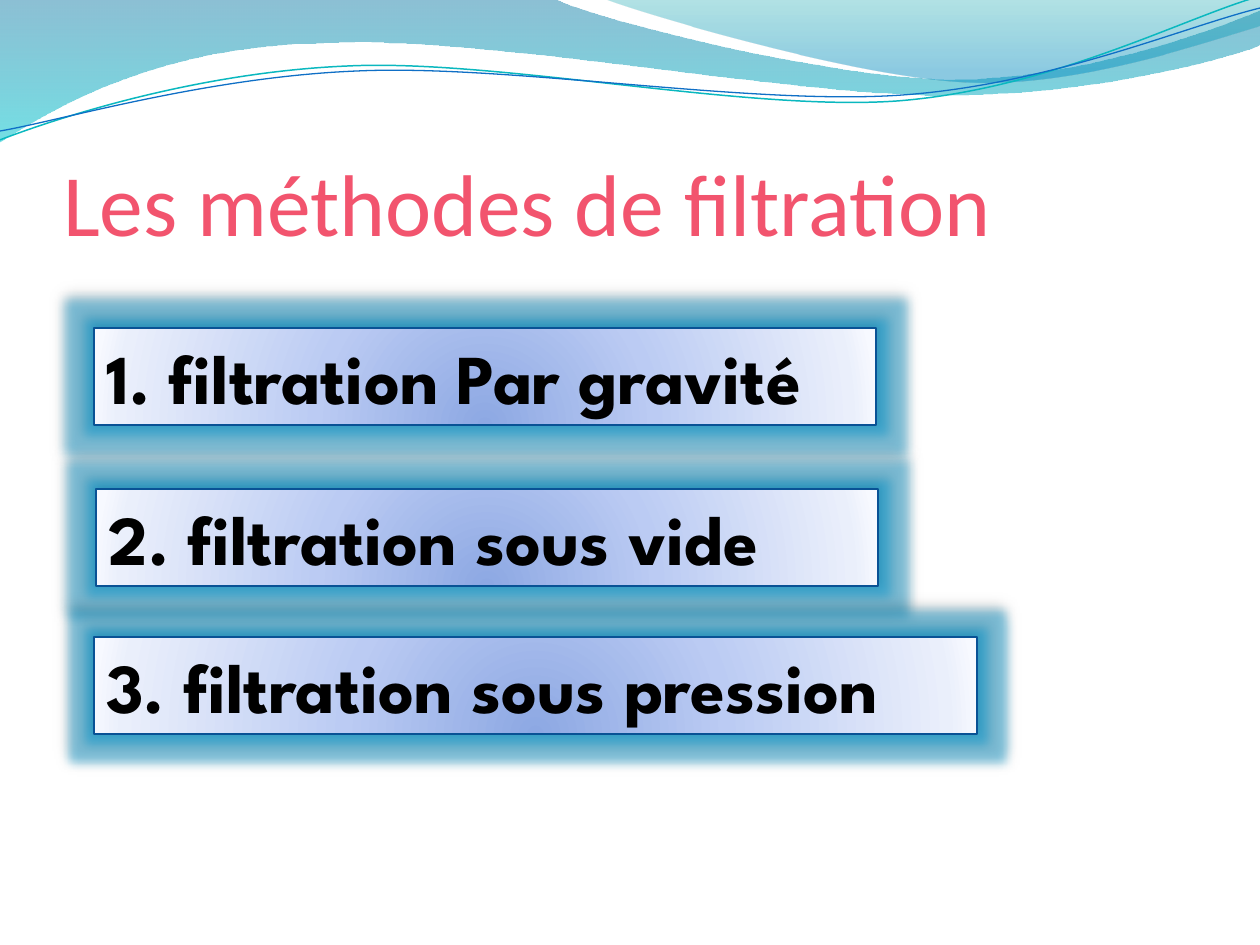
from math import cos, radians, sin

from lxml import etree
from pptx import Presentation
from pptx.dml.color import RGBColor
from pptx.enum.shapes import MSO_SHAPE
from pptx.enum.text import MSO_ANCHOR, PP_ALIGN
from pptx.oxml.ns import qn
from pptx.util import Pt

PX = 914400 / 126  # EMU in one px
LEFT, TOP, BOTTOM = PP_ALIGN.LEFT, MSO_ANCHOR.TOP, MSO_ANCHOR.BOTTOM
RECTANGLE = MSO_SHAPE.RECTANGLE
TITLE_ONLY = 5
LINE_TILT = -2.7  # degrees

# Waves: a start point, then line ends (2 numbers) or Bezier curves (6 numbers)
BACK_WAVE = [(0, 0), (554, -1), (600, 21, 837, 79, 955, 79),
             (1075, 79, 1207, 33, 1260, 11), (1261, 45),
             (1239, 55, 1096, 96, 940, 95), (784, 95, 481, 35, 324, 43),
             (163, 45, 58, 105, -1, 142), (0, 0)]
FRONT_WAVE = [(604, -1), (641, 14, 859, 78, 969, 82),
              (1079, 87, 1211, 40, 1260, 26), (1260, 0), (604, -1)]
TEAL_LINE = [(0, 140), (60, 117, 199, 72, 349, 66),
             (498, 59, 747, 112, 898, 101), (1050, 89, 1182, 19, 1257, -3)]
BLUE_LINE = [(0, 131), (59, 121, 207, 77, 357, 71),
             (508, 64, 752, 106, 903, 95), (1053, 84, 1186, 26, 1260, 8)]

# Gradient stops: position, colour, opacity (all in percent)
BACK_STOPS = [(0, "0074A1", 45), (100, "00C6CF", 55)]
FRONT_STOPS = [(0, "00A1A9", 30), (80, "008BBF", 45)]
BOX_STOPS = [(0, "8DA8E3", 100), (43, "BBCBF3", 100),
             (93, "EAEFFB", 100), (100, "F7F9FF", 100)]

METHODS = [("1. filtration Par gravité", 94, 328, 782),
           ("2. filtration sous vide", 96, 489, 782),
           ("3. filtration sous pression", 94, 637, 883)]
BOX_HEIGHT = 97


def px(value):
    return round(value * PX)


def rgb(hex_color):
    return RGBColor.from_string(hex_color)


def add_xml(parent, tag, **attributes):
    return etree.SubElement(parent, qn(tag), {k: str(v) for k, v in attributes.items()})


def add_color(parent, hex_color, opacity):
    color = add_xml(parent, "a:srgbClr", val=hex_color)
    if opacity < 100:
        add_xml(color, "a:alpha", val=opacity * 1000)


def set_gradient(shape, stops, circular=False):
    shape.fill.background()
    gradient = etree.Element(qn("a:gradFill"), rotWithShape="1")
    stop_list = add_xml(gradient, "a:gsLst")
    for position, color, opacity in stops:
        add_color(add_xml(stop_list, "a:gs", pos=position * 1000), color, opacity)
    if circular:
        circle = add_xml(gradient, "a:path", **{"path": "circle"})
        add_xml(circle, "a:fillToRect", l=50000, t=130000, r=50000, b=-30000)
    else:
        add_xml(gradient, "a:lin", ang=5400000, scaled=1)
    properties = shape.element.spPr
    properties.replace(properties.find(qn("a:noFill")), gradient)


def set_line(shape, color, width):
    shape.line.color.rgb = rgb(color)
    shape.line.width = Pt(width)


def add_glow_and_shadow(shape):
    effects = shape.element.spPr.find(qn("a:effectLst"))
    add_color(add_xml(effects, "a:glow", rad=Pt(11)), "009DD9", 40)
    shadow = add_xml(effects, "a:outerShdw", blurRad=Pt(5), dist=Pt(2),
                     dir=245 * 60000, algn="tl", rotWithShape=0)
    add_color(shadow, "000000", 50)


def turn(segments, degrees, center):
    """Turn all points clockwise around the centre."""
    c, s = cos(radians(degrees)), sin(radians(degrees))
    turned = []
    for segment in segments:
        coordinates = []
        for x, y in zip(segment[::2], segment[1::2]):
            dx, dy = x - center[0], y - center[1]
            coordinates += [center[0] + dx * c - dy * s, center[1] + dx * s + dy * c]
        turned.append(coordinates)
    return turned


def add_outline(slide, segments, close):
    points = [(px(x), px(y)) for segment in segments
              for x, y in zip(segment[::2], segment[1::2])]
    builder = slide.shapes.build_freeform(*points[0])
    builder.add_line_segments(points[1:], close=close)
    outline = builder.convert_to_shape()
    outline.shadow.inherit = False

    # Join each three points of a curve into one Bezier segment
    steps = iter(list(outline.element.spPr.iter(qn("a:lnTo"))))
    for segment in segments[1:]:
        step = next(steps)
        if len(segment) == 6:
            step.tag = qn("a:cubicBezTo")
            for _ in range(2):
                control = next(steps)
                step.append(control[0])
                control.getparent().remove(control)
    return outline


def add_wave(slide, segments, stops):
    wave = add_outline(slide, segments, close=True)
    set_gradient(wave, stops)
    wave.line.fill.background()


def add_wave_line(slide, segments, center, color, width):
    line = add_outline(slide, turn(segments, -LINE_TILT, center), close=False)
    line.rotation = LINE_TILT
    line.fill.background()
    set_line(line, color, width)


def set_text(shape, text, *, font, size, color, bold=False, anchor=TOP, insets=None):
    frame = shape.text_frame
    frame.word_wrap = True
    frame.vertical_anchor = anchor
    if insets:
        (frame.margin_left, frame.margin_top,
         frame.margin_right, frame.margin_bottom) = map(px, insets)
    paragraph = frame.paragraphs[0]
    paragraph.alignment = LEFT
    run = paragraph.add_run()
    run.text = text
    run.font.name = font
    run.font.size = Pt(size)
    run.font.bold = bold
    run.font.color.rgb = rgb(color)


def add_title(slide, text):
    title = slide.shapes.title
    title.left, title.top, title.width, title.height = map(px, (63, 97, 1134, 157))
    set_text(title, text, font="Calibri", size=50, color="F2546E",
             anchor=BOTTOM, insets=(0, 6, 0, 0))


def add_method(slide, text, left, top, width):
    box = slide.shapes.add_shape(RECTANGLE, *map(px, (left, top, width, BOX_HEIGHT)))
    box.shadow.inherit = False
    set_gradient(box, BOX_STOPS, circular=True)
    set_line(box, "095295", 0.75)
    add_glow_and_shadow(box)
    set_text(box, text, font="League Spartan", size=40, color="000000", bold=True)


def main():
    presentation = Presentation()
    presentation.slide_width, presentation.slide_height = px(1260), px(945)
    slide = presentation.slides.add_slide(presentation.slide_layouts[TITLE_ONLY])

    # Waves along the top
    add_wave(slide, BACK_WAVE, BACK_STOPS)
    add_wave(slide, FRONT_WAVE, FRONT_STOPS)
    add_wave_line(slide, TEAL_LINE, (629, 72), "0AB8BF", 0.85)
    add_wave_line(slide, BLUE_LINE, (629, 74), "0F6FC6", 0.75)

    # Title and the three methods
    add_title(slide, "Les méthodes de filtration")
    for method in METHODS:
        add_method(slide, *method)

    presentation.save("out.pptx")


if __name__ == "__main__":
    main()
